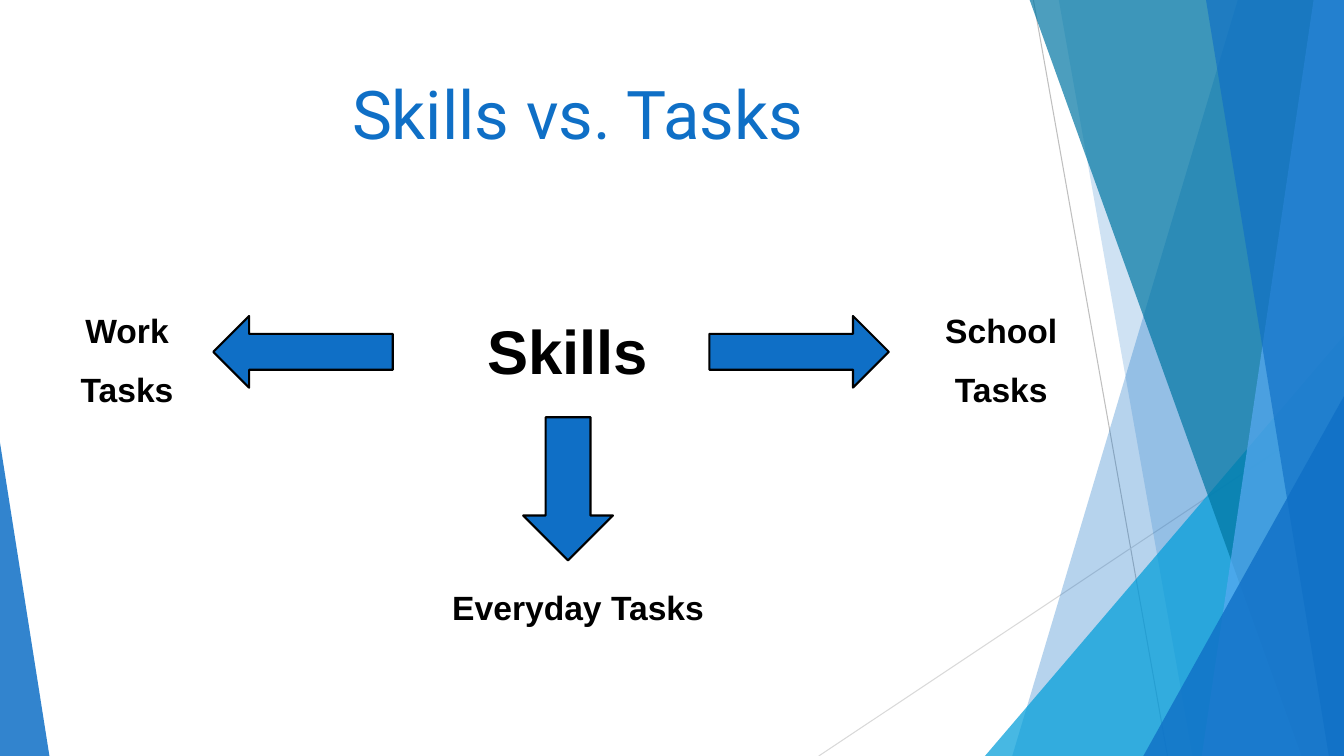
from lxml import etree
from pptx import Presentation
from pptx.dml.color import RGBColor
from pptx.enum.shapes import MSO_CONNECTOR, MSO_SHAPE
from pptx.enum.text import MSO_ANCHOR, MSO_AUTO_SIZE, PP_ALIGN
from pptx.oxml.ns import qn
from pptx.util import Inches, Pt

SLIDE_W, SLIDE_H = Inches(13.33), Inches(7.5)
COLORS = {
    "blue": "0F6FC6", "cyan": "009DD9", "teal": "0076A3", "sky": "59AAF2",
    "black": "000000", "grey": "BFBFBF", "pale": "D9D9D9",
}


def color(name):
    return RGBColor.from_string(COLORS[name])


def x(percent):
    return round(SLIDE_W * percent / 100)


def y(percent):
    return round(SLIDE_H * percent / 100)


def box(left, top, width, height):
    return x(left), y(top), x(width), y(height)


def paint(sp, fill, opacity=100):
    sp.shadow.inherit = False
    sp.fill.solid()
    sp.fill.fore_color.rgb = color(fill)
    sp.line.fill.background()
    if opacity < 100:
        clr = sp._element.spPr.find(qn("a:solidFill"))[0]
        etree.SubElement(clr, qn("a:alpha"), val=str(opacity * 1000))


def add_hairline(slide, start, end, line):
    cxn = slide.shapes.add_connector(
        MSO_CONNECTOR.STRAIGHT, x(start[0]), y(start[1]), x(end[0]), y(end[1]))
    cxn.line.color.rgb = color(line)
    cxn.line.width = Pt(0.75)
    etree.SubElement(cxn._element.spPr, qn("a:effectLst"))


def add_slab(slide, top_x, bottom_x, fill, opacity):
    top = y(-0.13)
    fb = slide.shapes.build_freeform(x(top_x), top)
    fb.add_line_segments(
        [(SLIDE_W, top), (SLIDE_W, SLIDE_H), (x(bottom_x), SLIDE_H)], close=True)
    paint(fb.convert_to_shape(), fill, opacity)


def add_corner(slide, left, right, top, apex, fill, opacity):
    sp = slide.shapes.add_shape(
        MSO_SHAPE.ISOSCELES_TRIANGLE, *box(left, top, right - left, 100 - top))
    sp.adjustments[0] = apex
    paint(sp, fill, opacity)


def add_text(slide, text, place, size=24, font="Arial", fill="black",
             bold=True, wrap=True, grow=True):
    tf = slide.shapes.add_textbox(*box(*place)).text_frame
    tf.word_wrap = wrap
    tf.auto_size = MSO_AUTO_SIZE.SHAPE_TO_FIT_TEXT if grow else MSO_AUTO_SIZE.NONE
    tf.vertical_anchor = MSO_ANCHOR.TOP
    for i, line in enumerate(text.split("\n")):
        p = tf.add_paragraph() if i else tf.paragraphs[0]
        p.alignment = PP_ALIGN.CENTER
        p.space_before = Pt(13 if i else 0)
        r = p.add_run()
        r.text = line
        r.font.name = font
        r.font.size = Pt(size)
        r.font.bold = bold
        r.font.color.rgb = color(fill)


def add_arrow(slide, place, rotation=0):
    sp = slide.shapes.add_shape(MSO_SHAPE.DOWN_ARROW, *box(*place))
    sp.rotation = rotation
    paint(sp, "blue")
    sp.line.color.rgb = color("black")
    sp.line.width = Pt(1.5)


def add_backdrop(slide):
    add_hairline(slide, (76.89, 0), (86.87, 100), "grey")
    add_hairline(slide, (100, 53.73), (60.92, 100), "pale")
    add_slab(slide, 92.12, 75.32, "blue", 30)
    add_slab(slide, 78.77, 88.75, "blue", 20)
    add_corner(slide, 73.29, 100, 44.4, 1, "cyan", 72)
    add_slab(slide, 76.59, 96.85, "teal", 70)
    add_slab(slide, 97.75, 89.42, "sky", 70)
    add_slab(slide, 89.72, 98.87, "blue", 65)
    add_corner(slide, 85.07, 100, 52.4, 1, "blue", 80)
    add_corner(slide, 0, 3.68, 58.53, 0, "blue", 85)


def main():
    prs = Presentation()
    prs.slide_width, prs.slide_height = SLIDE_W, SLIDE_H
    slide = prs.slides.add_slide(prs.slide_layouts[6])

    add_backdrop(slide)
    add_text(slide, "Skills vs. Tasks", (5.55, 8.93, 74.87, 19.2),
             size=48, font="Roboto", fill="blue", bold=False, grow=False)
    add_text(slide, "Work\nTasks", (1.28, 40.4, 16.35, 14.8))
    add_text(slide, "Skills", (35.41, 40.8, 13.65, 11.2), size=44, wrap=False)
    add_text(slide, "Everyday Tasks ", (32.78, 76.93, 21.16, 6.67), wrap=False)
    add_text(slide, "School\nTasks", (66.17, 40.4, 16.65, 14.8))

    for left, rotation in ((56.79, 270), (19.88, 90)):
        add_arrow(slide, (left, 34.67, 5.33, 23.73), rotation)
    add_arrow(slide, (38.93, 55.2, 6.68, 18.93))

    prs.save("out.pptx")


if __name__ == "__main__":
    main()
